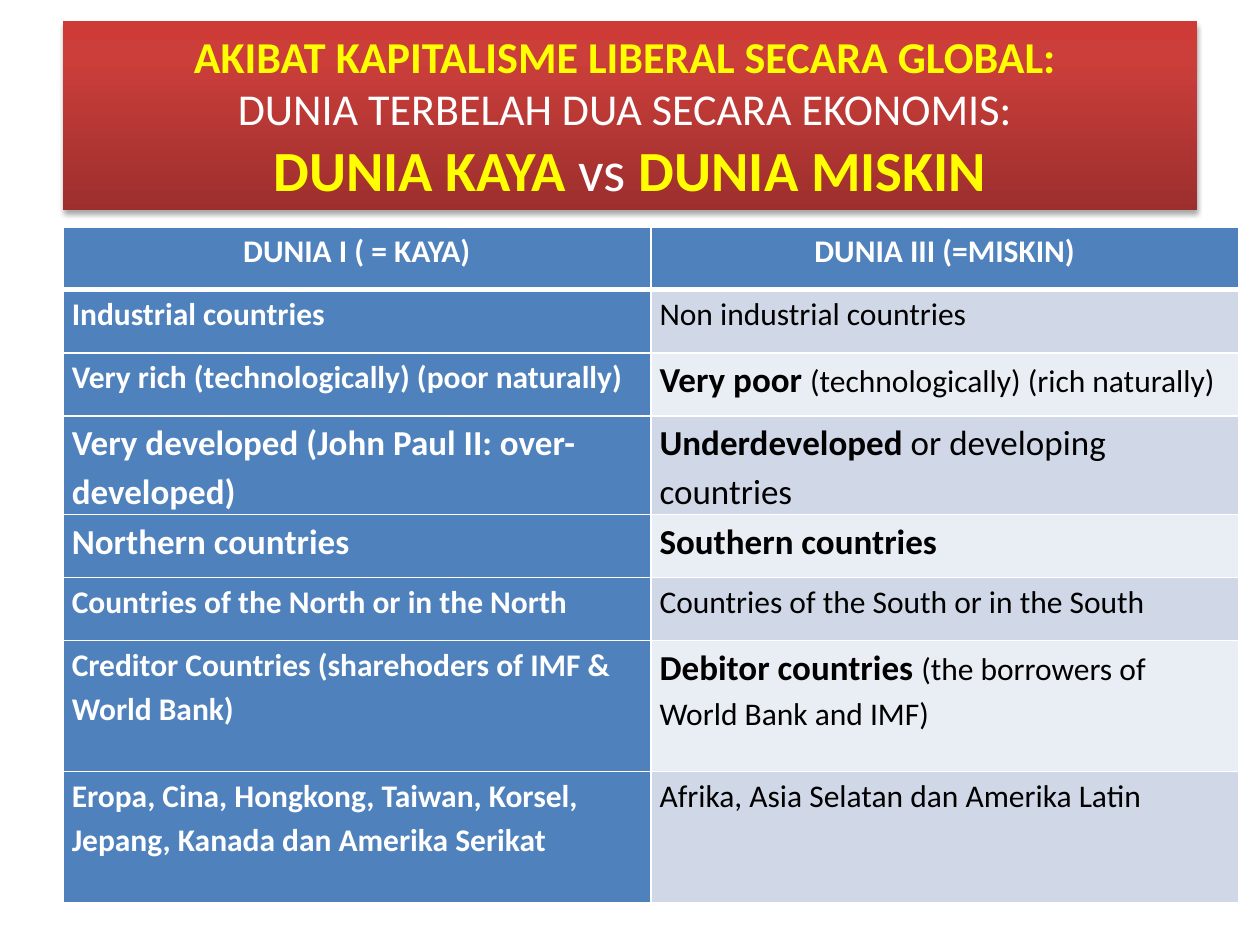
from lxml import etree
from pptx import Presentation
from pptx.dml.color import RGBColor
from pptx.enum.shapes import MSO_SHAPE
from pptx.enum.text import MSO_ANCHOR, PP_ALIGN
from pptx.oxml.ns import qn
from pptx.util import Inches, Pt

RECT = MSO_SHAPE.RECTANGLE
MIDDLE = MSO_ANCHOR.MIDDLE
LEFT, CENTER = PP_ALIGN.LEFT, PP_ALIGN.CENTER

WHITE = RGBColor(0xFF, 0xFF, 0xFF)
BLACK = RGBColor(0, 0, 0)
YELLOW = RGBColor(0xFF, 0xFF, 0)
BLUE = RGBColor(0x4F, 0x81, 0xBD)
BANDS = (RGBColor(0xD0, 0xD8, 0xE8), RGBColor(0xE9, 0xED, 0xF4))
RED_STOPS = ((0, RGBColor(0x9C, 0x2F, 0x2D)), (80, RGBColor(0xCB, 0x3E, 0x3A)),
             (100, RGBColor(0xCE, 0x3B, 0x37)))

# Title lines: (text, size, colour, bold)
TITLE = [
    [("AKIBAT KAPITALISME LIBERAL SECARA GLOBAL: ", 25.2, YELLOW, True)],
    [("DUNIA TERBELAH DUA SECARA EKONOMIS: ", 25.2, WHITE, False)],
    [("DUNIA KAYA ", 32.4, YELLOW, True), ("vs ", 32.4, WHITE, False),
     ("DUNIA MISKIN", 32.4, YELLOW, True)],
]

# Table rows: height, then the runs (text, size, bold) of each cell
ROWS = [
    (0.5, [("DUNIA I ( = KAYA)", 18, True)], [("DUNIA III (=MISKIN)", 18, True)]),
    (0.5, [("Industrial countries", 18, True)],
     [("Non industrial countries", 18, False)]),
    (0.5, [("Very rich (technologically) (poor naturally)", 18, True)],
     [("Very poor ", 20, True), ("(technologically) (rich naturally)", 18, False)]),
    (0.64, [("Very developed (John Paul II: over-developed)", 20, True)],
     [("Underdeveloped", 20, True), (" or developing countries", 20, False)]),
    (0.5, [("Northern countries", 20, True)], [("Southern countries", 20, True)]),
    (0.5, [("Countries of the North or in the North", 18, True)],
     [("Countries of the South or in the South", 18, False)]),
    (1.04, [("Creditor Countries (sharehoders of IMF & World Bank)", 18, True)],
     [("Debitor countries ", 20, True),
      ("(the borrowers of World Bank and IMF)", 18, False)]),
    (1.04, [("Eropa, Cina, Hongkong, Taiwan, Korsel, Jepang, Kanada dan Amerika Serikat",
             18, True)],
     [("Afrika, Asia Selatan dan Amerika Latin", 18, False)]),
]


def add_color(parent, color):
    return etree.SubElement(parent, qn("a:srgbClr"), val=str(color))


class SlideBuilder:
    font = "Calibri"

    def __init__(self, slide):
        self.s = slide

    def run(self, p, text, size, color, bold):
        r = p.add_run()
        r.text = text
        r.font.name = self.font
        r.font.size = Pt(size)
        r.font.bold = bold
        r.font.color.rgb = color

    def banner(self, x, y, w, h, lines):
        sp = self.s.shapes.add_shape(RECT, Inches(x), Inches(y), Inches(w), Inches(h))
        sp.line.fill.background()
        self.gradient(sp, RED_STOPS)
        self.shadow(sp)
        tf = sp.text_frame
        tf.word_wrap = True
        tf.vertical_anchor = MIDDLE
        p = tf.paragraphs[0]
        p.alignment = CENTER
        for i, line in enumerate(lines):
            if i:
                p.add_line_break()
            for part in line:
                self.run(p, *part)

    def gradient(self, sp, stops):
        sp.fill.gradient()
        sp.fill.gradient_angle = 90  # counter-clockwise: runs from bottom to top
        gs_lst = sp.fill._fill._gradFill.find(qn("a:gsLst"))
        for gs in list(gs_lst):
            gs_lst.remove(gs)
        for pos, color in stops:
            add_color(etree.SubElement(gs_lst, qn("a:gs"), pos=str(pos * 1000)), color)

    def shadow(self, sp):
        sp.shadow.inherit = False
        effects = sp._element.spPr.find(qn("a:effectLst"))
        outer = etree.SubElement(effects, qn("a:outerShdw"), blurRad=str(Pt(3.1)),
                                 dist=str(Pt(1.8)), dir="5400000", rotWithShape="0")
        etree.SubElement(add_color(outer, BLACK), qn("a:alpha"), val="35000")

    def borders(self, cell, **widths):
        tcPr = cell._tc.get_or_add_tcPr()
        for i, side in enumerate("LRTB"):
            ln = etree.Element(qn("a:ln" + side), w=str(Pt(widths.get(side, 1))))
            add_color(etree.SubElement(ln, qn("a:solidFill")), WHITE)
            tcPr.insert(i, ln)

    def cell(self, cell, parts, fill, color, align):
        cell.fill.solid()
        cell.fill.fore_color.rgb = fill
        cell.margin_left = cell.margin_right = Inches(0.07)
        cell.margin_top = cell.margin_bottom = 0
        p = cell.text_frame.paragraphs[0]
        p.alignment = align
        p.line_spacing = 1.15
        for text, size, bold in parts:
            self.run(p, text, size, color, bold)

    def table(self, x, y, w, rows):
        height = sum(row[0] for row in rows)
        table = self.s.shapes.add_table(len(rows), 2, Inches(x), Inches(y),
                                        Inches(w), Inches(height)).table
        for i, (row_height, *cells) in enumerate(rows):
            table.rows[i].height = Inches(row_height)
            for j, parts in enumerate(cells):
                cell = table.cell(i, j)
                blue = i == 0 or j == 0
                self.cell(cell, parts, BLUE if blue else BANDS[(i - 1) % 2],
                          WHITE if blue else BLACK, LEFT if i else CENTER)
                # Thick rule under the header row
                self.borders(cell, B=3 if i == 0 else 1, T=3 if i == 1 else 1)


def main():
    prs = Presentation()
    prs.slide_width, prs.slide_height = Inches(10), Inches(7.5)
    builder = SlideBuilder(prs.slides.add_slide(prs.slide_layouts[6]))

    # Title banner
    builder.banner(0.5, 0.17, 9, 1.5, TITLE)

    # Comparison table
    builder.table(0.5, 1.8, 9.33, ROWS)

    prs.save("out.pptx")


if __name__ == "__main__":
    main()
